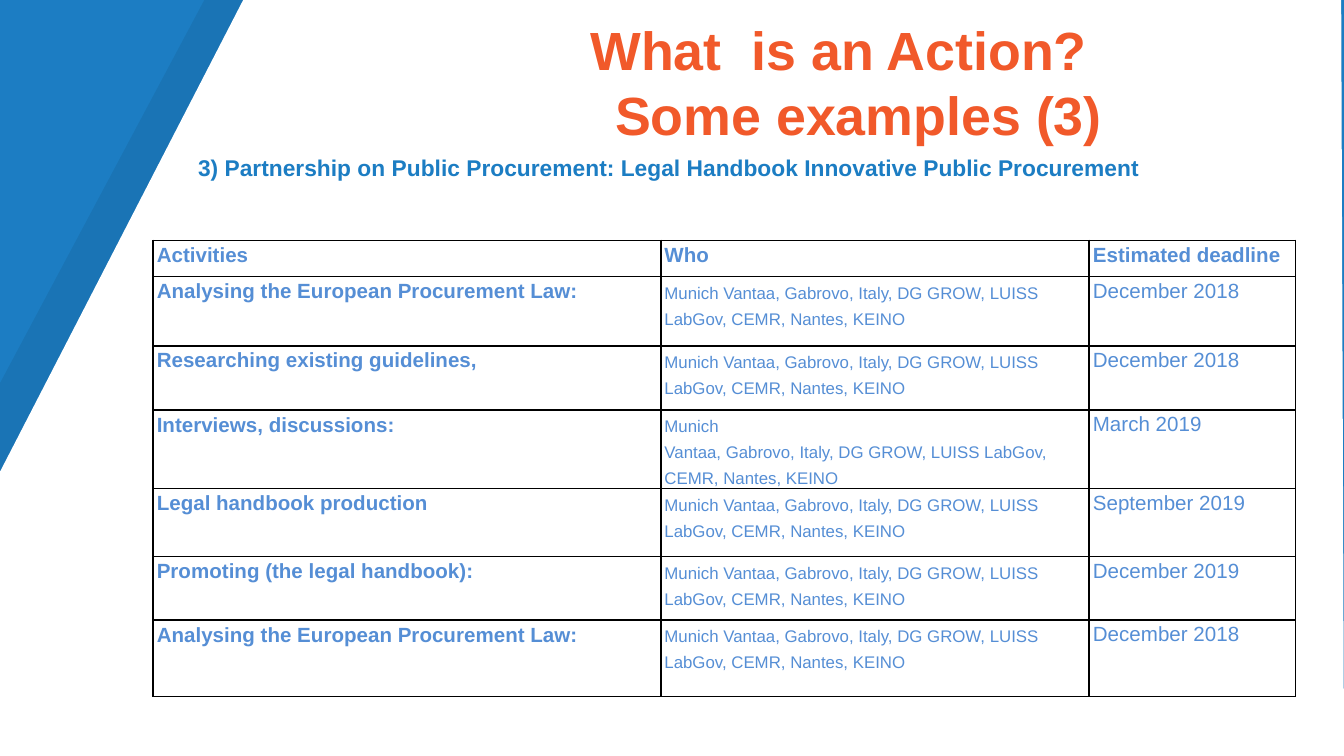
import dataclasses

import lxml.etree
import pptx
import pptx.dml.color
import pptx.enum.text
import pptx.oxml.ns
import pptx.util

Pt = pptx.util.Pt
RGB = pptx.dml.color.RGBColor.from_string
Align = pptx.enum.text.PP_ALIGN
Anchor = pptx.enum.text.MSO_ANCHOR
qn = pptx.oxml.ns.qn


@dataclasses.dataclass(frozen=True)
class Theme:
    font: str = "Arial"
    blue: str = "1C7DC3"
    orange: str = "F1592A"
    table_blue: str = "558ED5"
    white: str = "FFFFFF"
    black: str = "000000"
    title_size: float = 28.8
    subtitle_size: float = 12.2
    table_size: float = 11
    partners_size: float = 9


THEME = Theme()
WIDTH, HEIGHT = 720, 405

PARTNERS = ["Munich Vantaa, Gabrovo, Italy, DG GROW, LUISS LabGov, CEMR, Nantes, KEINO"]
SPLIT_PARTNERS = ["Munich", "Vantaa, Gabrovo, Italy, DG GROW, LUISS LabGov, CEMR, Nantes, KEINO"]
ACTIVITIES = [
    ("Analysing the European Procurement Law:", PARTNERS, "December 2018"),
    ("Researching existing guidelines,", PARTNERS, "December 2018"),
    ("Interviews, discussions:", SPLIT_PARTNERS, "March 2019"),
    ("Legal handbook production", PARTNERS, "September 2019"),
    ("Promoting (the legal handbook):", PARTNERS, "December 2019"),
    ("Analysing the European Procurement Law:", PARTNERS, "December 2018"),
]
COLUMN_WIDTHS = [272, 229.5, 110.5]
ROW_HEIGHTS = [19.5, 37, 34.5, 39, 36.5, 34, 41]


def write(frame, lines, *, size, color, bold=False, align=Align.LEFT, spacing=1.0):
    frame.word_wrap = True
    for index, line in enumerate(lines):
        paragraph = frame.paragraphs[0] if index == 0 else frame.add_paragraph()
        paragraph.text = line
        paragraph.alignment = align
        paragraph.line_spacing = spacing
        for run in paragraph.runs:
            run.font.name = THEME.font
            run.font.size = Pt(size)
            run.font.bold = bold
            run.font.color.rgb = RGB(color)


def add_panel(slide, box, lean, color, alpha=None):
    left, top, width, height = box
    right, bottom = left + width, top + height
    corners = [(right - 1.5, top), (right, bottom), (left, bottom), (left + lean, top)]
    points = [(Pt(x), Pt(y)) for x, y in corners]
    builder = slide.shapes.build_freeform(*points[0])
    builder.add_line_segments(points[1:], close=True)
    panel = builder.convert_to_shape()
    panel.shadow.inherit = False
    panel.line.fill.background()
    panel.fill.solid()
    panel.fill.fore_color.rgb = RGB(color)
    if alpha is not None:
        tint = panel.fill._xPr.find(".//" + qn("a:srgbClr"))
        lxml.etree.SubElement(tint, qn("a:alpha"), val=str(alpha * 1000))


def add_background(slide, box):
    left, top, width, height = box
    slide.background.fill.solid()
    slide.background.fill.fore_color.rgb = RGB(THEME.blue)
    for overhang, lean, color, alpha in [
        (106.5, 216, THEME.black, 7),
        (78.5, 208.8, THEME.white, None),
    ]:
        panel_box = (left - overhang, top, width + overhang, height)
        add_panel(slide, panel_box, lean, color, alpha)


def add_title(slide, box):
    frame = slide.shapes.add_textbox(*map(Pt, box)).text_frame
    frame.vertical_anchor = Anchor.MIDDLE
    write(frame, ["What  is an Action? \vSome examples (3)"], size=THEME.title_size,
          color=THEME.orange, bold=True, align=Align.RIGHT)


def add_subtitle(slide, box):
    frame = slide.shapes.add_textbox(*map(Pt, box)).text_frame
    frame.margin_top = Pt(5)
    write(frame, ["3) Partnership on Public Procurement: Legal Handbook Innovative Public Procurement"],
          size=THEME.subtitle_size, color=THEME.blue, bold=True)


def outline_cell(cell):
    properties = cell._tc.get_or_add_tcPr()
    for side in ("lnL", "lnR", "lnT", "lnB"):
        border = lxml.etree.SubElement(properties, qn(f"a:{side}"), w=str(Pt(1)))
        fill = lxml.etree.SubElement(border, qn("a:solidFill"))
        lxml.etree.SubElement(fill, qn("a:srgbClr"), val=THEME.black)


def fill_cell(cell, lines, **text_format):
    outline_cell(cell)
    cell.fill.background()
    cell.margin_left = cell.margin_right = Pt(2)
    cell.margin_top = cell.margin_bottom = 0
    write(cell.text_frame, lines, color=THEME.table_blue, **text_format)


def add_schedule(slide, box):
    schedule = slide.shapes.add_table(
        len(ROW_HEIGHTS), len(COLUMN_WIDTHS), *map(Pt, box)).table
    schedule.first_row = schedule.horz_banding = False
    for column, width in zip(schedule.columns, COLUMN_WIDTHS):
        column.width = Pt(width)
    for row, height in zip(schedule.rows, ROW_HEIGHTS):
        row.height = Pt(height)

    headings = ("Activities", ["Who"], "Estimated deadline")
    for index, (activity, partners, deadline) in enumerate([headings, *ACTIVITIES]):
        heading = index == 0
        activity_cell, partners_cell, deadline_cell = schedule.rows[index].cells
        fill_cell(activity_cell, [activity], size=THEME.table_size, bold=True,
                  spacing=Pt(14) if heading else 1.15)
        fill_cell(partners_cell, partners, bold=heading, spacing=Pt(14),
                  size=THEME.table_size if heading else THEME.partners_size)
        fill_cell(deadline_cell, [deadline], size=THEME.table_size, bold=heading,
                  align=Align.JUSTIFY, spacing=Pt(14))


def main():
    presentation = pptx.Presentation()
    presentation.slide_width, presentation.slide_height = Pt(WIDTH), Pt(HEIGHT)
    slide = presentation.slides.add_slide(presentation.slide_layouts[6])
    add_background(slide, (0, 0, WIDTH, HEIGHT))
    add_title(slide, (116, 10, 481.5, 67.5))
    add_subtitle(slide, (99, 77.5, 590, 34))
    add_schedule(slide, (82, 128.75, sum(COLUMN_WIDTHS), sum(ROW_HEIGHTS)))
    presentation.save("out.pptx")


if __name__ == "__main__":
    main()
